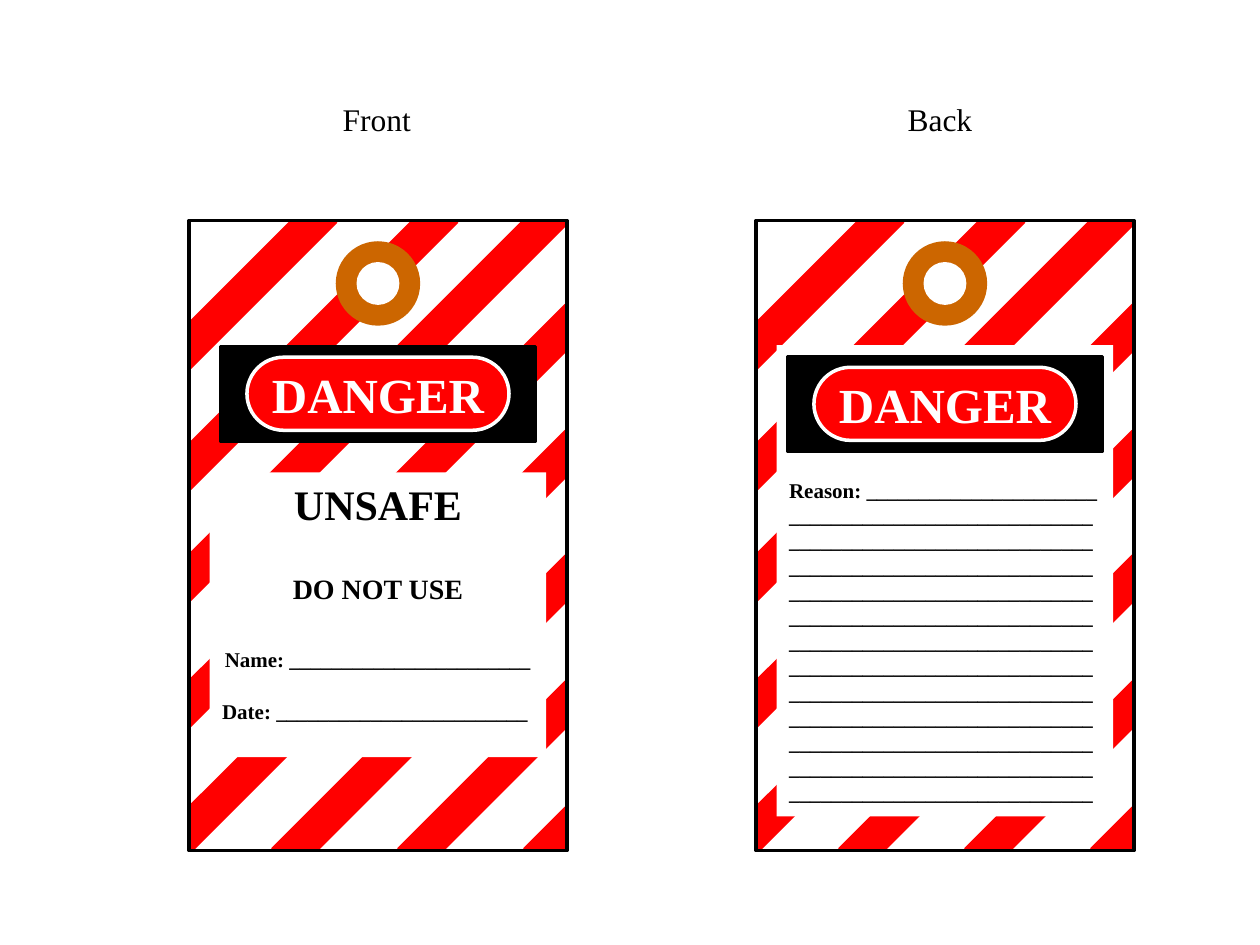
from lxml.etree import SubElement
from pptx import Presentation
from pptx.dml.color import RGBColor
from pptx.enum.shapes import MSO_CONNECTOR, MSO_SHAPE
from pptx.enum.text import MSO_ANCHOR, PP_ALIGN
from pptx.oxml.ns import qn
from pptx.util import Inches, Pt

RED = RGBColor(0xFF, 0x00, 0x00)
BLACK = RGBColor(0x00, 0x00, 0x00)
WHITE = RGBColor(0xFF, 0xFF, 0xFF)
BROWN = RGBColor(0xCC, 0x66, 0x00)

# Tag geometry, in inches
TAG_TOP, TAG_WIDTH, TAG_HEIGHT = 1.75, 3, 5
OVERHANG = 0.08
FRAME = 0.16
# Each stripe runs along x + y = sum, measured from the tag's corner
STRIPE_SUMS = (1, 1.96, 2.84, 3.84, 4.84, 5.83, 6.83, 7.83)


def write(paragraph, text, size=12, bold=True, color=BLACK, align=PP_ALIGN.LEFT,
          font="Times New Roman", before=0):
    paragraph.alignment = align
    paragraph.space_before = Pt(before)
    run = paragraph.add_run()
    run.text = text
    run.font.name = font
    run.font.size = Pt(size)
    run.font.bold = bold
    run.font.color.rgb = color


def set_frame(frame, anchor, horizontal=0.05, top=0.05):
    frame.word_wrap = True
    frame.vertical_anchor = anchor
    frame.margin_left = frame.margin_right = Inches(horizontal)
    frame.margin_top, frame.margin_bottom = Inches(top), Inches(0.05)


class TagSlide:
    def __init__(self, presentation):
        self.slide = presentation.slides.add_slide(presentation.slide_layouts[6])
        self.shapes = self.slide.shapes

    def start_tag(self):
        """Collect the following parts in a new group."""
        self.shapes = self.slide.shapes.add_group_shape().shapes

    def shape(self, kind, left, top, width, height, fill=None, line=None, weight=2):
        shape = self.shapes.add_shape(kind, Inches(left), Inches(top),
                                      Inches(width), Inches(height))
        shape.shadow.inherit = False
        if fill is None:
            shape.fill.background()
        else:
            shape.fill.solid()
            shape.fill.fore_color.rgb = fill
        if line is None:
            shape.line.fill.background()
        else:
            shape.line.color.rgb = line
            shape.line.width = Pt(weight)
        return shape

    def centered(self, kind, tag_left, top, width, height, *colors):
        """Add a shape in the middle of the tag's width."""
        left = tag_left + (TAG_WIDTH - width) / 2
        return self.shape(kind, left, top, width, height, *colors)

    def stripe(self, tag_left, total):
        start = max(-OVERHANG, total - TAG_HEIGHT - OVERHANG)
        end = min(TAG_WIDTH + OVERHANG, total + OVERHANG)
        connector = self.shapes.add_connector(
            MSO_CONNECTOR.STRAIGHT,
            Inches(tag_left + start), Inches(TAG_TOP + total - start),
            Inches(tag_left + end), Inches(TAG_TOP + total - end))
        connector.line.color.rgb = RED
        connector.line.width = Pt(20)
        SubElement(connector._element.spPr, qn("a:effectLst"))

    def background(self, left):
        for total in STRIPE_SUMS:
            self.stripe(left, total)
        # White frame trims the stripe ends, black frame edges the tag
        self.shape(MSO_SHAPE.RECTANGLE, left - FRAME, TAG_TOP - FRAME,
                   TAG_WIDTH + 2 * FRAME, TAG_HEIGHT + 2 * FRAME, line=WHITE, weight=22)
        self.shape(MSO_SHAPE.RECTANGLE, left, TAG_TOP, TAG_WIDTH, TAG_HEIGHT, line=BLACK)

    def eyelet(self, left):
        middle = 2.25
        for kind, size, color in ((MSO_SHAPE.DONUT, 0.67, BROWN),
                                  (MSO_SHAPE.OVAL, 0.34, WHITE)):
            self.centered(kind, left, middle - size / 2, size, size, color)

    def danger_sign(self, left, top):
        height, badge_height = 0.75, 0.58
        self.centered(MSO_SHAPE.RECTANGLE, left, top, 2.5, height, BLACK, BLACK)
        badge = self.centered(MSO_SHAPE.ROUNDED_RECTANGLE, left,
                              top + (height - badge_height) / 2,
                              2.08, badge_height, RED, WHITE)
        badge.adjustments[0] = 0.5
        set_frame(badge.text_frame, MSO_ANCHOR.MIDDLE)
        write(badge.text_frame.paragraphs[0], "DANGER", size=28, color=WHITE,
              align=PP_ALIGN.CENTER)

    def panel(self, left, top, height, inset, lines):
        panel = self.centered(MSO_SHAPE.RECTANGLE, left, top, 2.67, height, WHITE)
        frame = panel.text_frame
        set_frame(frame, MSO_ANCHOR.TOP, horizontal=0.1, top=inset)
        for index, (text, style) in enumerate(lines):
            paragraph = frame.add_paragraph() if index else frame.paragraphs[0]
            write(paragraph, text, **style)

    def label(self, left, text):
        box = self.slide.shapes.add_textbox(Inches(left), Inches(0.74),
                                            Inches(0.92), Inches(0.4))
        set_frame(box.text_frame, MSO_ANCHOR.MIDDLE)
        write(box.text_frame.paragraphs[0], text, size=18, bold=False,
              align=PP_ALIGN.CENTER)


def main():
    presentation = Presentation()
    presentation.slide_width, presentation.slide_height = Inches(10), Inches(7.5)
    tags = TagSlide(presentation)
    front, back = 1.5, 6
    center = PP_ALIGN.CENTER

    # Front of the tag
    tags.start_tag()
    tags.background(front)
    tags.danger_sign(front, 2.75)
    tags.eyelet(front)
    tags.panel(front, 3.75, 2.26, 0.05, [
        ("UNSAFE", dict(size=24, align=center)),
        ("DO NOT USE", dict(size=16, align=center, before=24.5)),
        ("Name: " + "_" * 23, dict(align=center, before=23.5)),
        ("Date: " + "_" * 24, dict(before=15)),
    ])

    # Back of the tag, with twelve ruled lines of 29 underscores
    tags.start_tag()
    tags.background(back)
    tags.eyelet(back)
    tags.panel(back, 2.74, 3.74, 1.05, [
        ("Reason: " + "_" * 22, {}),
        ("_" * 29 * 12, {}),
    ])
    tags.danger_sign(back, 2.83)

    # Labels above the tags
    tags.label(2.53, "Front")
    tags.label(7, "Back")
    presentation.save("out.pptx")


if __name__ == "__main__":
    main()
